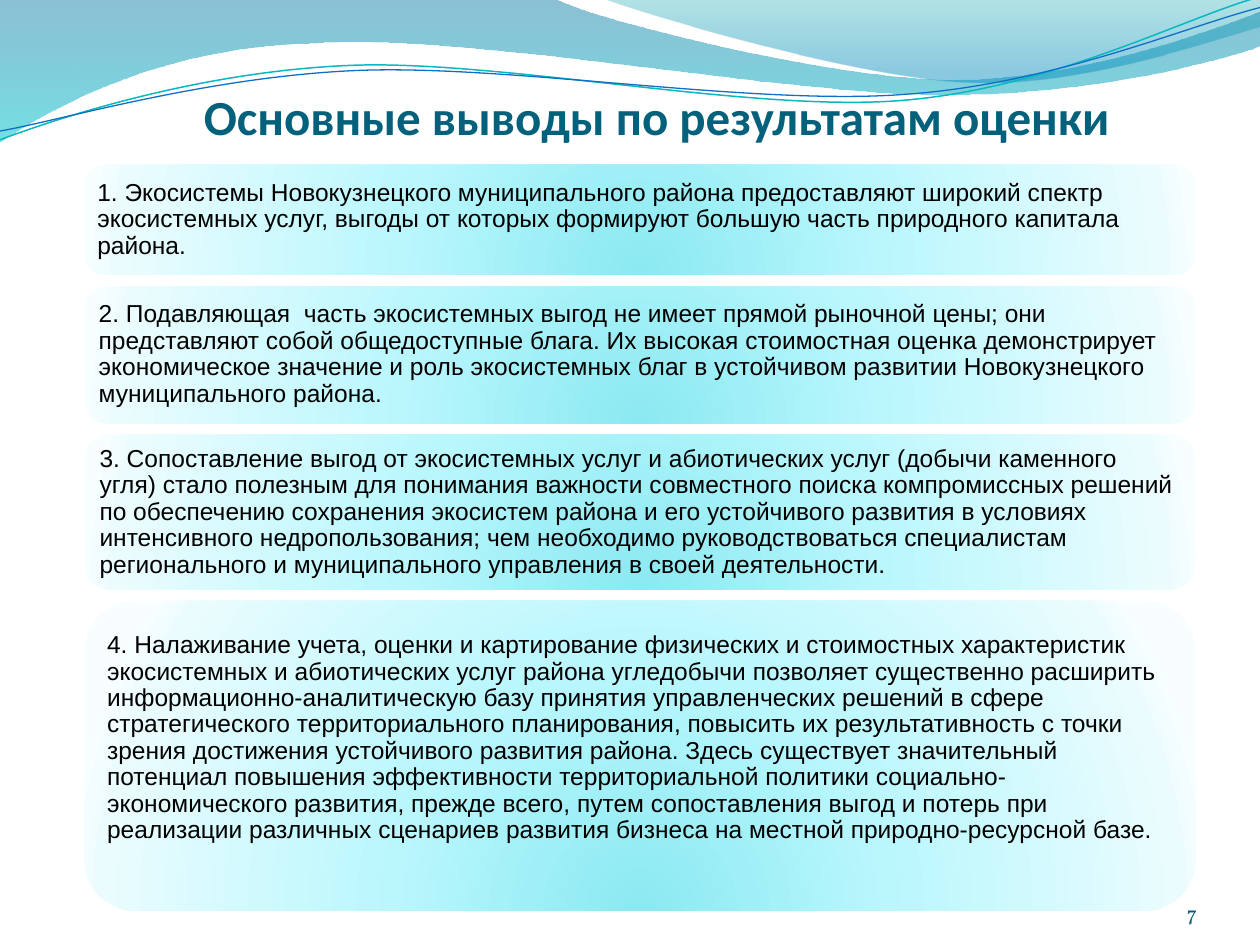
"""Build the slide of four main conclusions under a wave-shaped header."""
from dataclasses import dataclass
from typing import Optional

from lxml import etree
from pptx import Presentation
from pptx.dml.color import RGBColor
from pptx.enum.shapes import MSO_SHAPE
from pptx.enum.text import MSO_ANCHOR, MSO_AUTO_SIZE, PP_ALIGN
from pptx.oxml.ns import qn
from pptx.util import Inches, Pt

ROUNDED = MSO_SHAPE.ROUNDED_RECTANGLE
MIDDLE, BOTTOM = MSO_ANCHOR.MIDDLE, MSO_ANCHOR.BOTTOM
LEFT, CENTER, RIGHT = PP_ALIGN.LEFT, PP_ALIGN.CENTER, PP_ALIGN.RIGHT
NO_AUTOFIT = MSO_AUTO_SIZE.NONE

SLIDE_WIDTH, SLIDE_HEIGHT = Inches(10), Inches(7.5)
COLUMN, ROW = SLIDE_WIDTH / 10, SLIDE_HEIGHT / 7.5
PANEL_LEFT, PANEL_TOP, PANEL_WIDTH, PANEL_GAP = 0.67, 1.31, 8.82, 0.09
PANEL_INSET = 0.06

Stop = tuple[int, str, int]
Segment = tuple[float, ...]


@dataclass(frozen=True)
class Theme:
    """Colours, fonts and type sizes."""
    title: str = "04617B"
    number: str = "045D75"
    body: str = "000000"
    title_font: str = "Calibri"
    number_font: str = "Vollkorn"
    body_font: str = "Arial"
    title_size: float = 28
    number_size: float = 12
    body_size: float = 14
    panel_stops: tuple[Stop, ...] = (
        (0, "8BE9F1", 100), (43, "B9F7FD", 100), (93, "EAFCFE", 100), (100, "F8FEFF", 100))
    back_wave_stops: tuple[Stop, ...] = ((0, "0074A1", 45), (100, "00C6CF", 55))
    front_wave_stops: tuple[Stop, ...] = ((0, "00A1A9", 30), (80, "008BBF", 45))
    teal_line: str = "0AB8BF"
    blue_line: str = "0F6FC6"


THEME = Theme()


@dataclass(frozen=True)
class Wave:
    """A curved outline in columns and rows, filled by stops or drawn as a line."""
    start: tuple[float, float]
    segments: tuple[Segment, ...]
    stops: tuple[Stop, ...] = ()
    line: Optional[str] = None
    line_width: float = 0


@dataclass(frozen=True)
class Panel:
    """One conclusion, its height in rows and the extra room under its text."""
    text: str
    height: float
    room_below: float = 0


WAVES = (
    Wave((0, 0), ((4.4, -0.01), (4.76, 0.17, 6.64, 0.63, 7.58, 0.63),
                  (8.53, 0.63, 9.58, 0.26, 10, 0.09), (10.01, 0.36),
                  (9.83, 0.44, 8.7, 0.76, 7.46, 0.75), (6.22, 0.75, 3.82, 0.28, 2.57, 0.34),
                  (1.29, 0.36, 0.46, 0.83, -0.01, 1.13)), THEME.back_wave_stops),
    Wave((4.79, -0.01), ((5.09, 0.11, 6.82, 0.62, 7.69, 0.65),
                         (8.56, 0.69, 9.61, 0.32, 10, 0.21), (10, 0)), THEME.front_wave_stops),
    Wave((0, 1.11), ((0.48, 0.93, 1.58, 0.57, 2.77, 0.52), (3.95, 0.47, 5.93, 0.89, 7.13, 0.8),
                     (8.33, 0.71, 9.38, 0.15, 9.98, -0.02)),
         line=THEME.teal_line, line_width=0.85),
    Wave((0, 1.04), ((0.47, 0.96, 1.64, 0.61, 2.83, 0.56), (4.03, 0.51, 5.97, 0.84, 7.17, 0.75),
                     (8.36, 0.67, 9.41, 0.21, 10, 0.06)),
         line=THEME.blue_line, line_width=0.75),
)

PANELS = (
    Panel("1. Экосистемы Новокузнецкого муниципального района предоставляют широкий спектр "
          "экосистемных услуг, выгоды от которых формируют большую часть природного капитала "
          "района.", 0.87),
    Panel("2. Подавляющая  часть экосистемных выгод не имеет прямой рыночной цены; они "
          "представляют собой общедоступные блага. Их высокая стоимостная оценка демонстрирует "
          "экономическое значение и роль экосистемных благ в устойчивом развитии Новокузнецкого "
          "муниципального района.", 1.09),
    Panel("3. Сопоставление выгод от экосистемных услуг и абиотических услуг (добычи каменного "
          "угля) стало полезным для понимания важности совместного поиска компромиссных решений "
          "по обеспечению сохранения экосистем района и его устойчивого развития в условиях "
          "интенсивного недропользования; чем необходимо руководствоваться специалистам "
          "регионального и муниципального управления в своей деятельности.", 1.23),
    Panel("4. Налаживание учета, оценки и картирование физических и стоимостных характеристик "
          "экосистемных и абиотических услуг района угледобычи позволяет существенно расширить "
          "информационно-аналитическую базу принятия управленческих решений в сфере "
          "стратегического территориального планирования, повысить их результативность с точки "
          "зрения достижения устойчивого развития района. Здесь существует значительный "
          "потенциал повышения эффективности территориальной политики "
          "социально-экономического развития, прежде всего, путем сопоставления выгод и потерь "
          "при реализации различных сценариев развития бизнеса на местной природно-ресурсной "
          "базе.", 2.46, 0.28),
)


def place(shape, left: float, top: float, width: float, height: float) -> None:
    """Set a shape's frame in columns and rows."""
    shape.left, shape.top = round(left * COLUMN), round(top * ROW)
    shape.width, shape.height = round(width * COLUMN), round(height * ROW)


def fill_gradient(shape, stops: tuple[Stop, ...], radial: bool) -> None:
    """Fill a shape with a radial gradient or one running downwards."""
    shape.fill.background()
    empty = shape._element.spPr.find(qn("a:noFill"))
    gradient = etree.Element(qn("a:gradFill"), rotWithShape="1")
    stop_list = etree.SubElement(gradient, qn("a:gsLst"))
    for position, colour, opacity in stops:
        stop = etree.SubElement(stop_list, qn("a:gs"), pos=str(position * 1000))
        value = etree.SubElement(stop, qn("a:srgbClr"), val=colour)
        if opacity < 100:
            etree.SubElement(value, qn("a:alpha"), val=str(opacity * 1000))
    if radial:
        direction = etree.SubElement(gradient, qn("a:path"), path="circle")
        etree.SubElement(direction, qn("a:fillToRect"), l="50000", t="130000", r="50000", b="-30000")
    else:
        etree.SubElement(gradient, qn("a:lin"), ang="5400000", scaled="0")
    empty.getparent().replace(empty, gradient)


def bend(shape, segments: tuple[Segment, ...]) -> None:
    """Join each three lines that stand for a cubic segment into one curve."""
    lines = iter(list(shape._element.iter(qn("a:lnTo"))))
    for segment in segments:
        first = next(lines)
        if len(segment) == 2:
            continue
        curve = etree.Element(qn("a:cubicBezTo"))
        first.addprevious(curve)
        for line in (first, next(lines), next(lines)):
            curve.append(line[0])
            line.getparent().remove(line)


def draw_wave(slide, wave: Wave) -> None:
    """Draw one header wave."""
    points = [(segment[i] * COLUMN, segment[i + 1] * ROW)
              for segment in wave.segments for i in range(0, len(segment), 2)]
    builder = slide.shapes.build_freeform(wave.start[0] * COLUMN, wave.start[1] * ROW)
    builder.add_line_segments(points, close=bool(wave.stops))
    shape = builder.convert_to_shape()
    bend(shape, wave.segments)
    shape.shadow.inherit = False
    if wave.stops:
        fill_gradient(shape, wave.stops, radial=False)
        shape.line.fill.background()
    else:
        shape.fill.background()
        shape.line.color.rgb = RGBColor.from_string(wave.line)
        shape.line.width = Pt(wave.line_width)


def write(shape, text: str, font: str, size: float, colour: str, align, anchor,
          insets: tuple[float, ...], bold: bool = False):
    """Put one formatted paragraph into a shape and return it."""
    frame = shape.text_frame
    frame.word_wrap, frame.auto_size, frame.vertical_anchor = True, NO_AUTOFIT, anchor
    frame.margin_left, frame.margin_top, frame.margin_right, frame.margin_bottom = map(Inches, insets)
    paragraph = frame.paragraphs[0]
    paragraph.text, paragraph.alignment = text, align
    paragraph.font.name, paragraph.font.size, paragraph.font.bold = font, Pt(size), bold
    paragraph.font.color.rgb = RGBColor.from_string(colour)
    return paragraph


def draw_panel(slide, panel: Panel, top: float) -> None:
    """Draw one conclusion in its rounded panel."""
    shape = slide.shapes.add_shape(ROUNDED, 0, 0, 0, 0)
    place(shape, PANEL_LEFT, top, PANEL_WIDTH, panel.height)
    shape.shadow.inherit = False
    shape.line.fill.background()
    fill_gradient(shape, THEME.panel_stops, radial=True)
    insets = (PANEL_INSET,) * 3 + (PANEL_INSET + panel.room_below,)
    paragraph = write(shape, panel.text, THEME.body_font, THEME.body_size, THEME.body,
                      LEFT, MIDDLE, insets)
    paragraph.line_spacing = 0.9


def main() -> None:
    """Build and save the presentation."""
    presentation = Presentation()
    presentation.slide_width, presentation.slide_height = SLIDE_WIDTH, SLIDE_HEIGHT
    slide = presentation.slides.add_slide(presentation.slide_layouts[5])
    for wave in WAVES:
        draw_wave(slide, wave)
    title = slide.shapes.title
    slide.shapes._spTree.append(title._element)
    place(title, 0.67, 0.6, 9.08, 0.55)
    write(title, "Основные выводы по результатам оценки", THEME.title_font, THEME.title_size,
          THEME.title, CENTER, BOTTOM, (0, 0.05, 0, 0), bold=True)
    number = slide.shapes.add_textbox(0, 0, 0, 0)
    place(number, 8.67, 6.95, 0.83, 0.4)
    write(number, "7", THEME.number_font, THEME.number_size, THEME.number, RIGHT, BOTTOM, (0,) * 4)
    top = PANEL_TOP
    for panel in PANELS:
        draw_panel(slide, panel, top)
        top += panel.height + PANEL_GAP
    presentation.save("out.pptx")


if __name__ == "__main__":
    main()
